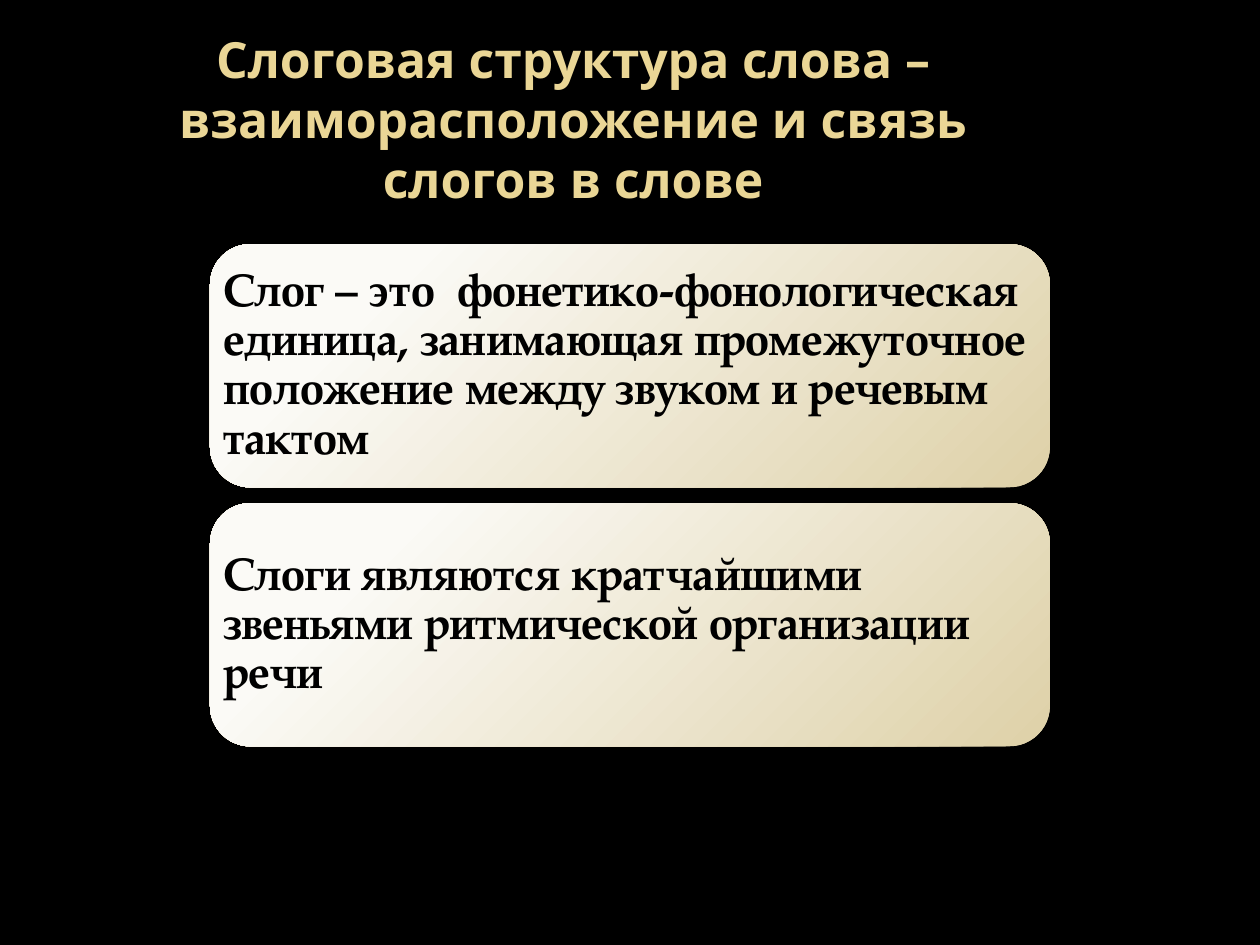
"""Build a slide defining the syllable structure of a word."""
from lxml.etree import SubElement
from pptx import Presentation
from pptx.dml.color import RGBColor
from pptx.enum.shapes import MSO_SHAPE
from pptx.enum.text import MSO_ANCHOR, MSO_AUTO_SIZE, PP_ALIGN
from pptx.oxml.ns import qn
from pptx.util import Pt


def color(value):
    return RGBColor.from_string(value)


def apply_radial_gradient(shape, stops):
    shape.fill.gradient()
    for stop, (position, value) in zip(shape.fill.gradient_stops, stops):
        stop.position = position
        stop.color.rgb = color(value)
    gradient = shape.element.spPr.find(qn("a:gradFill"))
    gradient.remove(gradient.find(qn("a:lin")))
    radial = SubElement(gradient, qn("a:path"), path="circle")
    SubElement(radial, qn("a:fillToRect"), l="-15000", t="-15000", r="115000", b="115000")


presentation = Presentation()
presentation.slide_width = Pt(720)
presentation.slide_height = Pt(540)
slide = presentation.slides.add_slide(presentation.slide_layouts[5])
slide.background.fill.solid()
slide.background.fill.fore_color.rgb = color("000000")

title = slide.shapes.title
title.left, title.top, title.width, title.height = Pt(42.5), Pt(0), Pt(570), Pt(136)
title.text = "Слоговая структура слова – взаиморасположение и связь слогов в слове"
title_frame = title.text_frame
title_frame.auto_size = MSO_AUTO_SIZE.NONE
title_frame.vertical_anchor = MSO_ANCHOR.TOP
title_frame.margin_top = Pt(16.5)
title_frame.margin_bottom = Pt(0)
paragraph = title_frame.paragraphs[0]
paragraph.alignment = PP_ALIGN.CENTER
paragraph.font.name = "Noto Sans"
paragraph.font.size = Pt(28.5)
paragraph.font.bold = True
paragraph.font.color.rgb = color("EAD696")

statements = [
    "Слог – это  фонетико-фонологическая единица, занимающая промежуточное положение между звуком и речевым тактом",
    "Слоги являются кратчайшими звеньями ритмической организации речи",
]
card_top, card_height, card_gap = 139.5, 139, 9
for index, statement in enumerate(statements):
    top = card_top + index * (card_height + card_gap)
    card = slide.shapes.add_shape(
        MSO_SHAPE.ROUNDED_RECTANGLE, Pt(120), Pt(top), Pt(480), Pt(card_height)
    )
    card.shadow.inherit = False
    card.line.fill.background()
    apply_radial_gradient(card, [(0.2, "FBFAF6"), (1, "DED1A8")])
    frame = card.text_frame
    frame.word_wrap = True
    frame.vertical_anchor = MSO_ANCHOR.MIDDLE
    frame.margin_left = frame.margin_right = Pt(1)
    frame.margin_top = frame.margin_bottom = Pt(1)
    frame.text = statement
    paragraph = frame.paragraphs[0]
    paragraph.alignment = PP_ALIGN.LEFT
    paragraph.line_spacing = 0.9
    paragraph.font.name = "TeX Gyre Pagella"
    paragraph.font.size = Pt(26)
    paragraph.font.bold = True
    paragraph.font.color.rgb = color("000000")

presentation.save("out.pptx")
